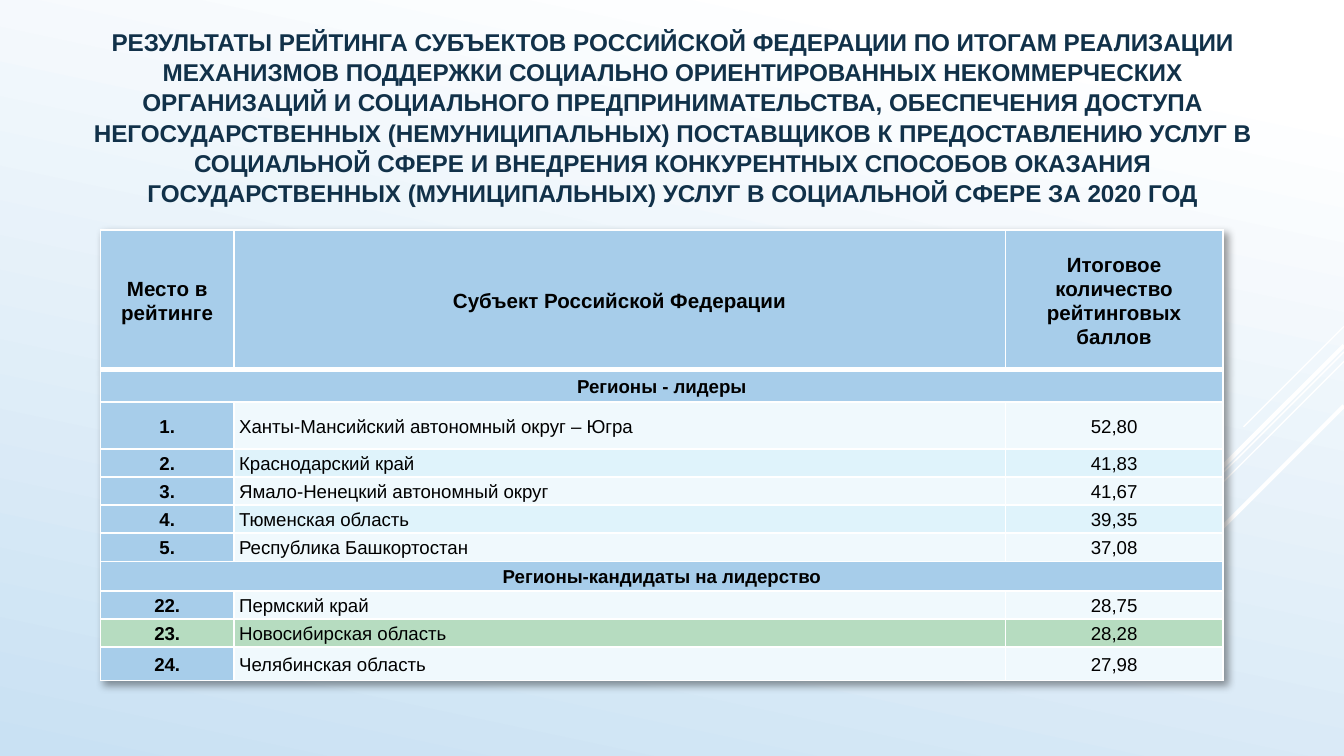
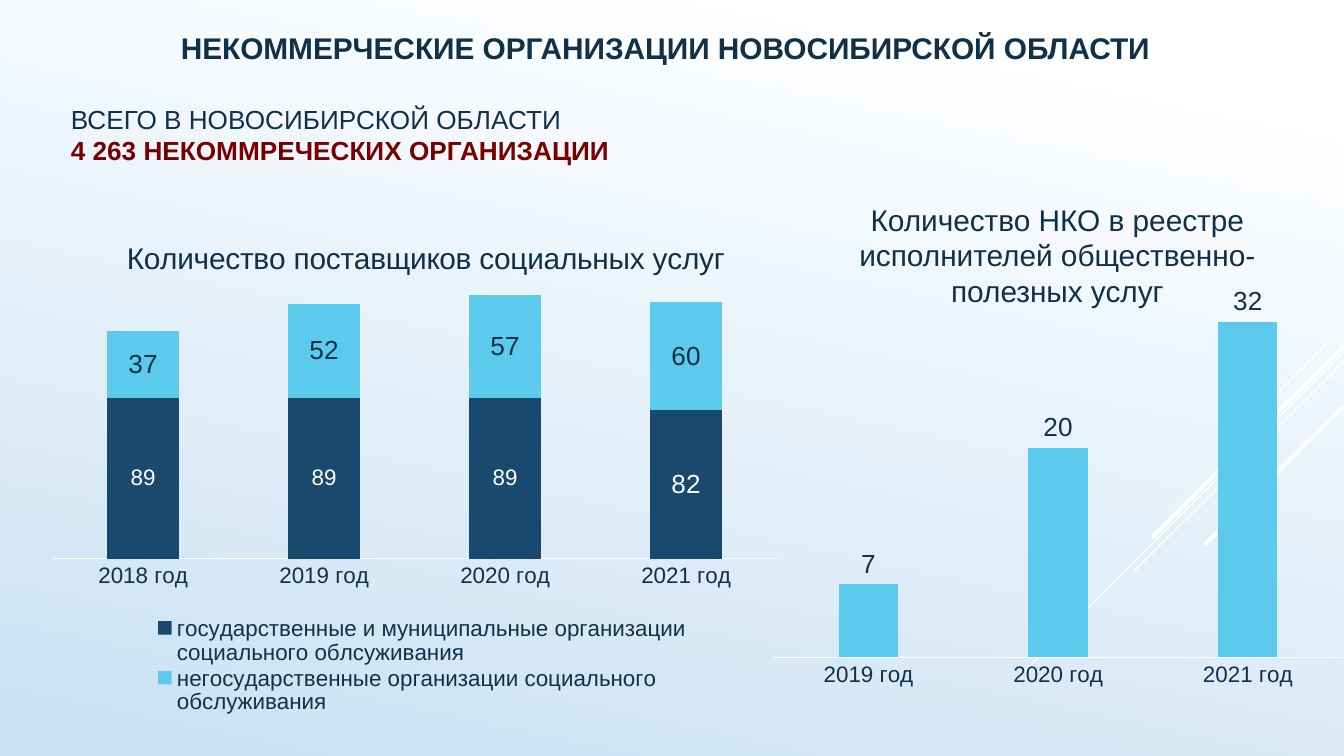
from lxml.etree import SubElement
from pptx import Presentation
from pptx.chart.data import CategoryChartData
from pptx.dml.color import RGBColor
from pptx.enum.chart import XL_CHART_TYPE, XL_LABEL_POSITION, XL_LEGEND_POSITION, XL_TICK_MARK
from pptx.enum.shapes import MSO_CONNECTOR
from pptx.enum.text import MSO_ANCHOR, PP_ALIGN
from pptx.oxml import parse_xml
from pptx.oxml.ns import nsdecls, qn
from pptx.util import Cm, Pt

FONT = "Arial"
NAVY, RED, WHITE, BLACK = "113149", "7A0000", "FFFFFF", "000000"
DEEP_BLUE, CYAN, BACKGROUND_BLUE = "19496D", "5CCAED", "C9E1F3"
HEADER_BLUE, HIGHLIGHT_GREEN = "A7CDEA", "B6DCC0"
BANDS = ("F0F9FD", "DFF3FB")

SLIDE_WIDTH, SLIDE_HEIGHT = 25.4, 14.29
# Diagonal rays: height at the right edge, reach (cm), weight (pt)
RAYS = ((6.17, 1.9, 0.75), (6.65, 6.21, 0.75), (6.83, 3.96, 0.75),
        (6.53, 3.63, 2.25), (7.67, 2.64, 2.25))

RATING_TITLE = (
    "РЕЗУЛЬТАТЫ РЕЙТИНГА СУБЪЕКТОВ РОССИЙСКОЙ ФЕДЕРАЦИИ ПО ИТОГАМ РЕАЛИЗАЦИИ "
    "МЕХАНИЗМОВ ПОДДЕРЖКИ СОЦИАЛЬНО ОРИЕНТИРОВАННЫХ НЕКОММЕРЧЕСКИХ ОРГАНИЗАЦИЙ "
    "И СОЦИАЛЬНОГО ПРЕДПРИНИМАТЕЛЬСТВА, ОБЕСПЕЧЕНИЯ ДОСТУПА НЕГОСУДАРСТВЕННЫХ "
    "(НЕМУНИЦИПАЛЬНЫХ) ПОСТАВЩИКОВ К ПРЕДОСТАВЛЕНИЮ УСЛУГ В СОЦИАЛЬНОЙ СФЕРЕ "
    "И ВНЕДРЕНИЯ КОНКУРЕНТНЫХ СПОСОБОВ ОКАЗАНИЯ ГОСУДАРСТВЕННЫХ (МУНИЦИПАЛЬНЫХ) "
    "УСЛУГ В СОЦИАЛЬНОЙ СФЕРЕ ЗА 2020 ГОД")
RATING_ROWS = (
    ("Место в рейтинге", "Субъект Российской Федерации",
     "Итоговое количество рейтинговых баллов"),
    ("Регионы - лидеры",),
    ("1.", "Ханты-Мансийский автономный округ – Югра", "52,80"),
    ("2.", "Краснодарский край", "41,83"),
    ("3.", "Ямало-Ненецкий автономный округ", "41,67"),
    ("4.", "Тюменская область", "39,35"),
    ("5.", "Республика Башкортостан", "37,08"),
    ("Регионы-кандидаты на лидерство",),
    ("22.", "Пермский край", "28,75"),
    ("23.", "Новосибирская область", "28,28"),
    ("24.", "Челябинская область", "27,98"),
)
COLUMN_WIDTHS = (2.52, 14.58, 4.11)
ROW_HEIGHTS = (2.64, 0.61, 0.89, 0.53, 0.53, 0.53, 0.53, 0.56, 0.53, 0.53, 0.63)
HIGHLIGHTED_PLACE = "23."


def color(hex_value):
    return RGBColor.from_string(hex_value)


def lengths(box):
    return [Cm(value) for value in box]


def style_font(font, size, hex_value, bold=False):
    font.name, font.size, font.bold = FONT, Pt(size), bold
    font.color.rgb = color(hex_value)


def style_paragraph(paragraph, size, hex_value, bold=False, align=PP_ALIGN.LEFT, spacing=1.0):
    paragraph.alignment = align
    paragraph.line_spacing = spacing
    for run in paragraph.runs:
        style_font(run.font, size, hex_value, bold)


def set_background(master):
    fill = master.background.fill
    fill.gradient()
    fill.gradient_angle = 258
    for stop, position, shade in zip(fill.gradient_stops, (0.1, 1), (WHITE, BACKGROUND_BLUE)):
        stop.position = position
        stop.color.rgb = color(shade)


def add_rays(slide):
    for top, reach, weight in RAYS:
        ray = slide.shapes.add_connector(
            MSO_CONNECTOR.STRAIGHT, Cm(SLIDE_WIDTH), Cm(top),
            Cm(SLIDE_WIDTH - reach), Cm(top + reach))
        ray.line.color.rgb = color(WHITE)
        ray.line.width = Pt(weight)
        SubElement(ray.element.spPr, qn("a:effectLst"))


def add_titled_slide(presentation, title_text, box, size, spacing=1.0):
    slide = presentation.slides.add_slide(presentation.slide_layouts[5])
    title = slide.shapes.title
    title.left, title.top, title.width, title.height = lengths(box)
    frame = title.text_frame
    frame.text = title_text
    frame.word_wrap = True
    frame.vertical_anchor = MSO_ANCHOR.TOP
    style_paragraph(frame.paragraphs[0], size, NAVY, True, PP_ALIGN.CENTER, spacing)
    add_rays(slide)
    return slide


def add_text(slide, box, lines, size, align=PP_ALIGN.LEFT):
    """Add a text box; each line is (text, colour, bold)."""
    frame = slide.shapes.add_textbox(*lengths(box)).text_frame
    frame.word_wrap = True
    frame.text = "\n".join(line[0] for line in lines)
    for paragraph, (_, shade, bold) in zip(frame.paragraphs, lines):
        style_paragraph(paragraph, size, shade, bold, align)


def set_borders(cell, top, bottom):
    properties = cell._tc.get_or_add_tcPr()
    for side, weight in (("L", 1), ("R", 1), ("T", top), ("B", bottom)):
        properties.append(parse_xml(
            f'<a:ln{side} {nsdecls("a")} w="{Pt(weight)}"><a:solidFill>'
            f'<a:srgbClr val="{WHITE}"/></a:solidFill></a:ln{side}>'))


def cell_fill(row, column, values):
    if values[0] == HIGHLIGHTED_PLACE:
        return HIGHLIGHT_GREEN
    if row == 0 or column == 0:
        return HEADER_BLUE
    return BANDS[row % 2]


def format_cell(cell, text, row, column, fill):
    cell.text = text
    cell.vertical_anchor = MSO_ANCHOR.MIDDLE
    cell.margin_left = cell.margin_right = Cm(0.1)
    cell.margin_top, cell.margin_bottom = Cm(0.02), 0
    is_region_name = row > 0 and column == 1
    style_paragraph(cell.text_frame.paragraphs[0], 11 if row == 0 else 10, BLACK,
                    row == 0 or column == 0,
                    PP_ALIGN.LEFT if is_region_name else PP_ALIGN.CENTER, 1.06)
    set_borders(cell, 3 if row == 1 else 1, 3 if row == 0 else 1)
    cell.fill.solid()
    cell.fill.fore_color.rgb = color(fill)


def add_rating_table(slide, left, top):
    box = (left, top, sum(COLUMN_WIDTHS), sum(ROW_HEIGHTS))
    table = slide.shapes.add_table(
        len(RATING_ROWS), len(COLUMN_WIDTHS), *lengths(box)).table
    for column, width in zip(table.columns, COLUMN_WIDTHS):
        column.width = Cm(width)
    for row, height in zip(table.rows, ROW_HEIGHTS):
        row.height = Cm(height)
    for row, values in enumerate(RATING_ROWS):
        is_section = len(values) == 1
        if is_section:
            table.cell(row, 0).merge(table.cell(row, len(COLUMN_WIDTHS) - 1))
        for column in range(len(COLUMN_WIDTHS)):
            text = values[column] if column < len(values) else ""
            fill = HEADER_BLUE if is_section else cell_fill(row, column, values)
            format_cell(table.cell(row, column), text, row, column, fill)
    table._tbl.tblPr.insert(0, parse_xml(
        f'<a:effectLst {nsdecls("a")}><a:outerShdw blurRad="50800" dist="38100" dir="2700000" '
        'algn="tl" rotWithShape="0"><a:prstClr val="black"><a:alpha val="40000"/></a:prstClr>'
        '</a:outerShdw></a:effectLst>'))


def place_chart_part(part, index, x, y, width=None, height=None, inner=False):
    """Give a chart part a manual layout in fractions of the chart."""
    layout = part.find(qn("c:layout"))
    if layout is not None:
        part.remove(layout)
    values = [("layoutTarget", "inner")] if inner else []
    values += [("xMode", "edge"), ("yMode", "edge"), ("x", x), ("y", y)]
    if width:
        values += [("w", width), ("h", height)]
    items = "".join(f'<c:{name} val="{value}"/>' for name, value in values)
    part.insert(index, parse_xml(
        f'<c:layout {nsdecls("c")}><c:manualLayout>{items}</c:manualLayout></c:layout>'))


def add_column_chart(slide, box, chart_type, categories, series, maximum, gap, overlap, plot_box):
    """Add a column chart; each series is (name, values, fill, label size, label colour)."""
    data = CategoryChartData()
    data.categories = categories
    for name, values, *_ in series:
        data.add_series(name, values)
    chart = slide.shapes.add_chart(chart_type, *lengths(box), data).chart
    style_font(chart.font, 12, NAVY)
    chart.has_title = chart.has_legend = False

    value_axis, category_axis = chart.value_axis, chart.category_axis
    value_axis.minimum_scale, value_axis.maximum_scale = 0, maximum
    value_axis.has_major_gridlines = value_axis.visible = False
    category_axis.major_tick_mark = XL_TICK_MARK.NONE
    category_axis.format.line.color.rgb = color(WHITE)
    category_axis.format.line.width = Pt(0.75)
    style_font(category_axis.tick_labels.font, 12, NAVY)

    plot = chart.plots[0]
    plot.gap_width, plot.overlap, plot.vary_by_categories = gap, overlap, False
    stacked = chart_type == XL_CHART_TYPE.COLUMN_STACKED
    for columns, (_, _, fill, label_size, label_color) in zip(plot.series, series):
        columns.format.fill.solid()
        columns.format.fill.fore_color.rgb = color(fill)
        labels = columns.data_labels
        labels.show_value = True
        labels.position = XL_LABEL_POSITION.CENTER if stacked else XL_LABEL_POSITION.OUTSIDE_END
        style_font(labels.font, label_size, label_color)
    place_chart_part(chart.element.xpath("c:chart/c:plotArea")[0], 0, *plot_box, inner=True)
    return chart


def add_providers_chart(slide, box):
    series = (
        ("государственные и муниципальные организации социального облсуживания",
         (89, 89, 89, 82), DEEP_BLUE, 12, WHITE),
        ("негосударственные организации социального обслуживания",
         (37, 52, 57, 60), CYAN, 14, NAVY),
    )
    chart = add_column_chart(
        slide, box, XL_CHART_TYPE.COLUMN_STACKED,
        ("2018 год", "2019 год", "2020 год", "2021 год"), series,
        160, 150, 100, (0.02, 0.12, 0.95, 0.57))
    last_label = chart.plots[0].series[0].points[3].data_label
    style_font(last_label.font, 14, WHITE)
    last_label.position = XL_LABEL_POSITION.CENTER

    title = chart.chart_title
    title.text_frame.text = "Количество поставщиков социальных услуг"
    style_paragraph(title.text_frame.paragraphs[0], 16, NAVY, align=PP_ALIGN.CENTER)
    place_chart_part(chart.element.xpath("c:chart/c:title")[0], 1, 0.11, 0.05)

    chart.has_legend = True
    chart.legend.position = XL_LEGEND_POSITION.BOTTOM
    chart.legend.include_in_layout = False
    style_font(chart.legend.font, 12, NAVY)
    place_chart_part(chart.element.xpath("c:chart/c:legend")[0], 1, 0.14, 0.8, 0.73, 0.2)


def add_registry_chart(slide, box):
    add_column_chart(
        slide, box, XL_CHART_TYPE.COLUMN_CLUSTERED, ("2019 год", "2020 год", "2021 год"),
        (("Количество НКО", (7, 20, 32), CYAN, 14, NAVY),),
        35, 219, -27, (0.02, 0.02, 0.96, 0.89))


def build_rating_slide(presentation):
    slide = add_titled_slide(presentation, RATING_TITLE, (1.3, 0.36, 22.8, 3.58), 13, 1.04)
    add_rating_table(slide, 1.9, 4.35)


def build_organizations_slide(presentation):
    slide = add_titled_slide(presentation, "НЕКОММЕРЧЕСКИЕ ОРГАНИЗАЦИИ НОВОСИБИРСКОЙ ОБЛАСТИ",
                             (2.6, 0.43, 19.96, 0.94), 16)
    add_providers_chart(slide, (0.71, 3.94, 14.4, 9.6))
    add_text(slide, (1.09, 1.83, 11.2, 1.45),
             (("ВСЕГО В НОВОСИБИРСКОЙ ОБЛАСТИ", NAVY, False),
              ("4 263 НЕКОММРЕЧЕСКИХ ОРГАНИЗАЦИИ", RED, True)), 14)
    add_text(slide, (15.49, 3.68, 8.99, 2.31),
             (("Количество НКО в реестре исполнителей общественно-полезных услуг", NAVY, False),),
             16, PP_ALIGN.CENTER)
    add_registry_chart(slide, (14.4, 5.33, 11.2, 7.8))


def main():
    presentation = Presentation()
    presentation.slide_width, presentation.slide_height = Cm(SLIDE_WIDTH), Cm(SLIDE_HEIGHT)
    set_background(presentation.slide_master)
    build_rating_slide(presentation)
    build_organizations_slide(presentation)
    presentation.save("out.pptx")


if __name__ == "__main__":
    main()
